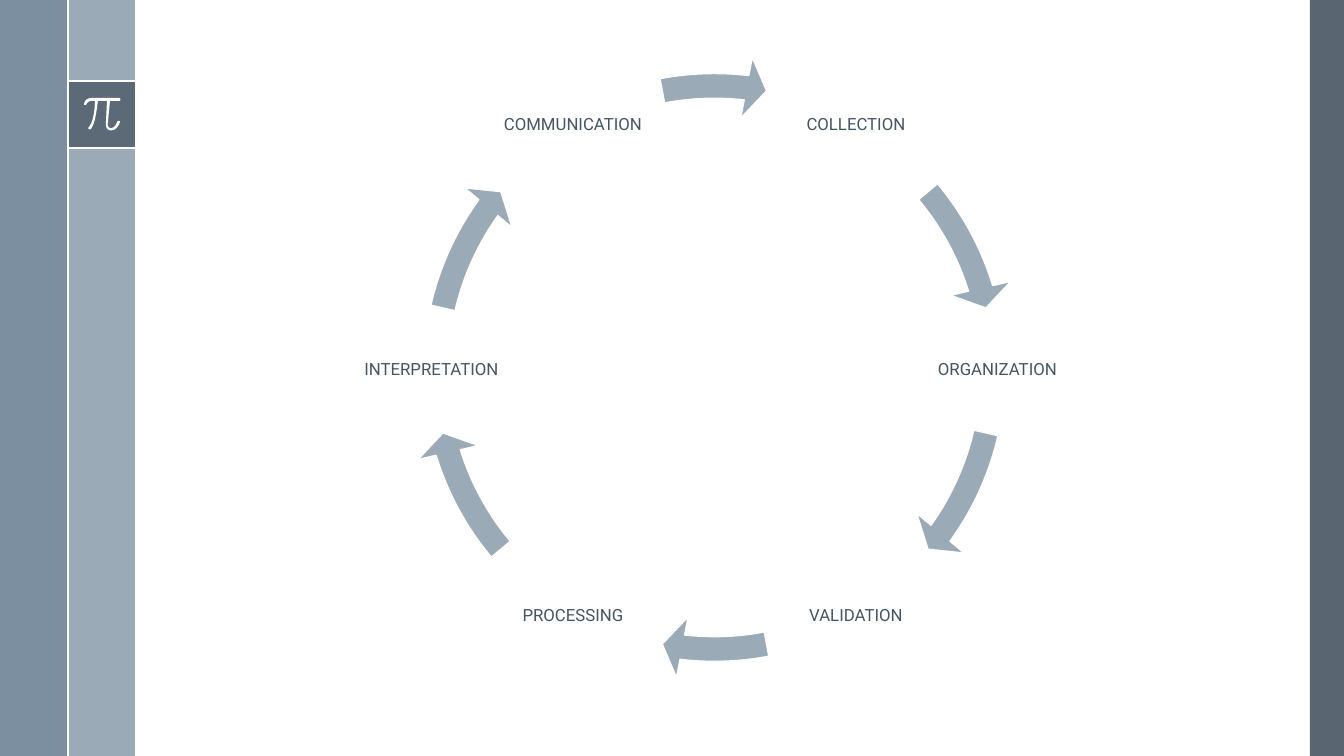
from math import cos, radians, sin

from lxml import etree
from pptx import Presentation
from pptx.dml.color import RGBColor
from pptx.enum.shapes import MSO_CONNECTOR, MSO_SHAPE
from pptx.enum.text import MSO_ANCHOR, PP_ALIGN
from pptx.oxml.ns import qn
from pptx.util import Pt

RECT, ARROW = MSO_SHAPE.RECTANGLE, MSO_SHAPE.CIRCULAR_ARROW
STRAIGHT = MSO_CONNECTOR.STRAIGHT
MIDDLE, CENTER = MSO_ANCHOR.MIDDLE, PP_ALIGN.CENTER

PX = 914400 / 100.8
WIDE, HIGH = 1344, 756
COLORS = {"dark": "475562", "mist": "9BAAB7", "steel": "6A8093",
          "text": "465562", "white": "FFFFFF"}

STEPS = ["COLLECTION", "ORGANIZATION", "VALIDATION",
         "PROCESSING", "INTERPRETATION", "COMMUNICATION"]
SWEEPS = [(342.86, 320.08), (35.75, 12.96), (96.61, 79.22)]

PI_START = (350, 0)
PI_PARTS = [
    [(70, 0)],
    [(20, 0), (0, 50), (0, 60)],
    [(0, 65), (5, 70), (10, 70)],
    [(20, 70)],
    [(20, 70), (35, 30), (70, 30)],
    [(110, 30)],
    [(110, 70), (100, 240), (50, 290)],
    [(40, 300), (40, 305), (50, 310)],
    [(55, 315), (65, 315), (70, 310)],
    [(120, 250), (130, 70), (140, 30)],
    [(230, 30)],
    [(220, 240)],
    [(220, 240), (210, 280), (235, 310)],
    [(245, 320), (260, 325), (270, 325)],
    [(340, 320), (355, 250), (360, 240)],
    [(365, 235), (355, 230), (350, 230)],
    [(340, 230), (335, 230), (330, 240)],
    [(330, 240), (320, 290), (280, 300)],
    [(270, 303), (250, 300), (245, 290)],
    [(235, 280), (238, 250), (240, 240)],
    [(260, 30)],
    [(350, 30)],
    [(362, 30), (365, 20), (365, 15)],
    [(365, 5), (360, 0), (350, 0)],
]


def emu(*sizes):
    return [round(size * PX) for size in sizes]


def color(name):
    return RGBColor.from_string(COLORS[name])


def paint(shape, name, alpha=100):
    shape.shadow.inherit = False
    shape.fill.solid()
    shape.fill.fore_color.rgb = color(name)
    if alpha < 100:
        tint = shape.fill._xPr.find(".//" + qn("a:srgbClr"))
        etree.SubElement(tint, qn("a:alpha"), val=str(alpha * 1000))


def add_bar(slide, box, name, alpha=100):
    bar = slide.shapes.add_shape(RECT, *emu(*box))
    paint(bar, name, alpha)
    bar.line.fill.background()


def add_rule(slide, ends):
    rule = slide.shapes.add_connector(STRAIGHT, *emu(*ends))
    rule.line.color.rgb = color("white")
    rule.line.width = Pt(1.5)
    etree.SubElement(rule._element.spPr, qn("a:effectLst"))


def trace(start, parts, count=6):
    points = []
    for part in parts:
        if len(part) == 1:
            points += part
        else:
            a, b, c, d = start, *part
            for i in range(1, count + 1):
                t = i / count
                u = 1 - t
                points.append(tuple(
                    u**3 * a[k] + 3 * u * u * t * b[k]
                    + 3 * u * t * t * c[k] + t**3 * d[k] for k in (0, 1)))
        start = part[-1]
    return points


def add_pi(slide, left, top):
    pen = slide.shapes.build_freeform(*PI_START, scale=PX / 10)
    pen.add_line_segments(trace(PI_START, PI_PARTS), close=True)
    glyph = pen.convert_to_shape(*emu(left, top))
    paint(glyph, "white")
    glyph.line.fill.background()


def add_frame(slide, box):
    left, top, width, height = box
    band, edge = 68, 34
    inner, badge = left + band, top + 81
    add_bar(slide, (left + width - edge, top, edge, height), "dark", 90)
    add_bar(slide, (inner, top, 67, height), "mist")
    add_bar(slide, (left, top, band, height), "steel", 88)
    add_bar(slide, (inner, badge, 67, 67), "dark", 75)
    for y in (badge, badge + 67):
        add_rule(slide, (inner, y, inner + 67, y))
    add_pi(slide, inner + 16, badge + 17)
    add_rule(slide, (inner, top, inner, top + height))


def add_label(slide, box, text):
    label = slide.shapes.add_textbox(*emu(*box))
    frame = label.text_frame
    frame.word_wrap = True
    frame.vertical_anchor = MIDDLE
    frame.margin_left = frame.margin_right = emu(2)[0]
    frame.margin_top = frame.margin_bottom = emu(2)[0]
    para = frame.paragraphs[0]
    para.text = text
    para.alignment = CENTER
    para.line_spacing = 0.9
    para.font.name = "Roboto"
    para.font.size = Pt(12)
    para.font.color.rgb = color("text")


def add_arrow(slide, box, end, start):
    arrow = slide.shapes.add_shape(ARROW, *emu(*box))
    for i, value in enumerate((0.04, 2.51, end * 0.6, start * 0.6, 0.05)):
        arrow.adjustments[i] = value
    paint(arrow, "mist")
    arrow.line.color.rgb = color("white")
    arrow.line.width = Pt(1)


def add_cycle(slide, box):
    left, top, width, height = box
    mid_x, mid_y = left + width / 2, top + height / 2
    reach, wide, high = 283, 176, 127
    for i, step in enumerate(STEPS):
        angle = radians(60 * i - 60)
        x = mid_x + reach * cos(angle) - wide / 2
        y = mid_y + reach * sin(angle) - high / 2
        add_label(slide, (x, y, wide, high), step)
        half, turn = divmod(i, len(SWEEPS))
        end, start = [(a + 180 * half) % 360 for a in SWEEPS[turn]]
        lift = 6 if i == len(STEPS) - 1 else 0
        add_arrow(slide, (left, top - lift, width, height), end, start)


def main():
    deck = Presentation()
    deck.slide_width, deck.slide_height = emu(WIDE, HIGH)
    slide = deck.slides.add_slide(deck.slide_layouts[6])
    add_frame(slide, (0, 0, WIDE, HIGH))
    add_cycle(slide, (405, 61, 619, 619))
    deck.save("out.pptx")


if __name__ == "__main__":
    main()
